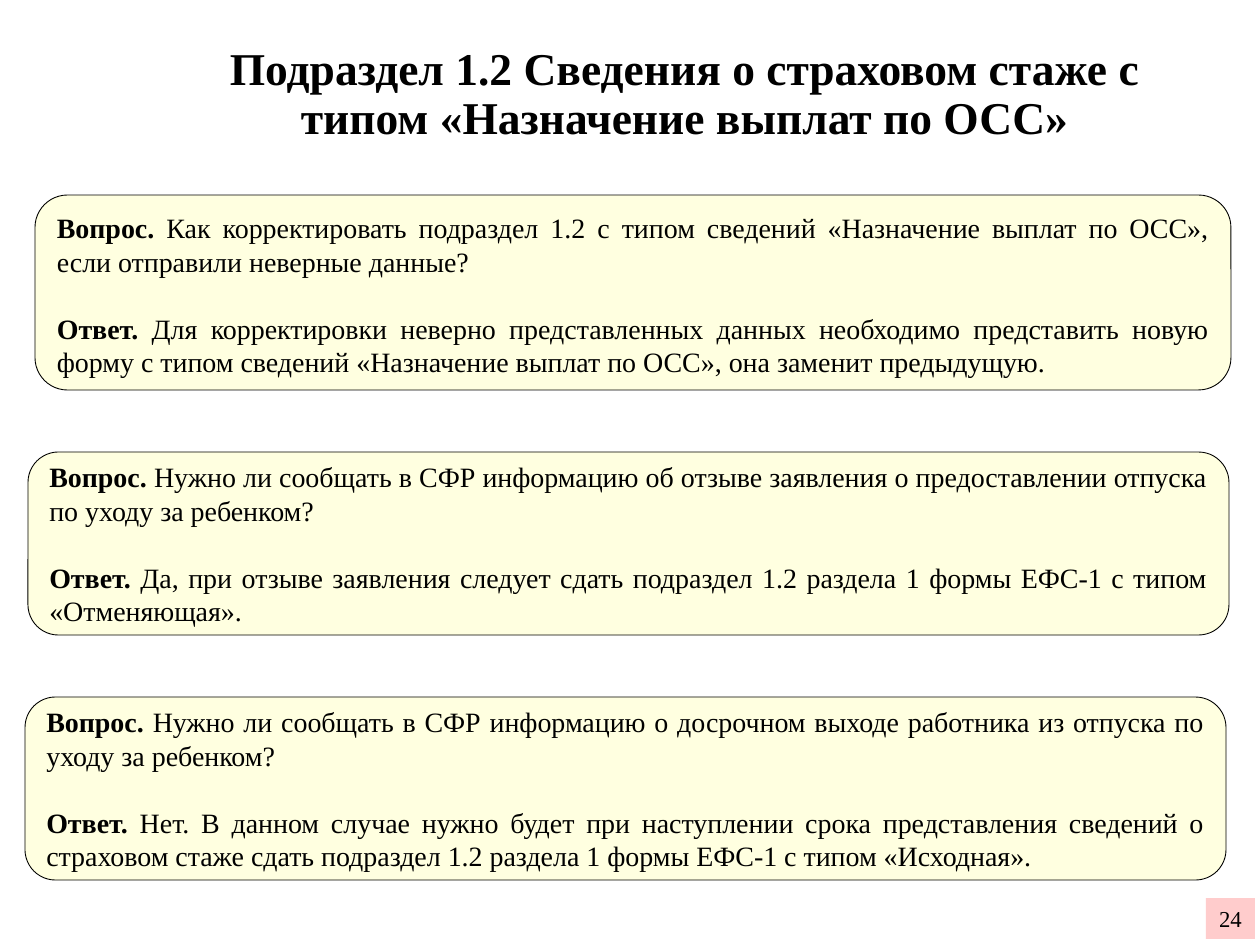
from dataclasses import dataclass

from lxml.etree import SubElement
from pptx import Presentation
from pptx.dml.color import RGBColor
from pptx.enum.shapes import MSO_SHAPE
from pptx.enum.text import MSO_ANCHOR, MSO_AUTO_SIZE, PP_ALIGN
from pptx.oxml.ns import qn
from pptx.util import Emu, Pt

SCALE = 914400 / 126


def px(*nums):
    return [Emu(round(n * SCALE)) for n in nums]


@dataclass(frozen=True)
class Theme:
    face: str = "Times New Roman"
    ink: str = "000000"
    card: str = "FFFFCC"
    badge: str = "FFCCCC"
    alpha: int = 60
    head: int = 26
    body: int = 16
    small: int = 13
    gap: int = 19
    edge: float = 0.5


class Page:
    def __init__(self, deck, theme):
        self.slide = deck.slides.add_slide(deck.slide_layouts[5])
        self.theme = theme

    def style(self, para, size, align, bold=None):
        para.alignment = align
        font = para.font
        font.name, font.size, font.bold = self.theme.face, Pt(size), bold
        font.color.rgb = RGBColor.from_string(self.theme.ink)

    def shape(self, kind, box, fill):
        item = self.slide.shapes.add_shape(kind, *px(*box))
        item.shadow.inherit = False
        item.fill.solid()
        item.fill.fore_color.rgb = RGBColor.from_string(fill)
        return item

    def title(self, box, text):
        item = self.slide.shapes.title
        item.left, item.top, item.width, item.height = px(*box)
        frame = item.text_frame
        frame.text = text
        frame.auto_size = MSO_AUTO_SIZE.NONE
        frame.vertical_anchor = MSO_ANCHOR.MIDDLE
        para = frame.paragraphs[0]
        para.line_spacing = 0.9
        self.style(para, self.theme.head, PP_ALIGN.CENTER, True)

    def card(self, box, anchor, query, reply):
        """Draw a rounded card with a question and its answer."""
        item = self.shape(MSO_SHAPE.ROUNDED_RECTANGLE, box, self.theme.card)
        color = item.fill._xPr.find(".//" + qn("a:srgbClr"))
        SubElement(color, qn("a:alpha"), val=str(self.theme.alpha * 1000))
        item.line.color.rgb = RGBColor.from_string(self.theme.ink)
        item.line.width = Pt(self.theme.edge)
        frame = item.text_frame
        frame.word_wrap = True
        frame.vertical_anchor = anchor
        first, last = frame.paragraphs[0], frame.add_paragraph()
        last.space_before = Pt(self.theme.gap)
        for para, label, text in ((first, "Вопрос. ", query), (last, "Ответ. ", reply)):
            self.style(para, self.theme.body, PP_ALIGN.JUSTIFY)
            lead = para.add_run()
            lead.text, lead.font.bold = label, True
            para.add_run().text = text

    def badge(self, box, text):
        item = self.shape(MSO_SHAPE.RECTANGLE, box, self.theme.badge)
        item.line.fill.background()
        frame = item.text_frame
        frame.text = text
        frame.word_wrap = False
        frame.vertical_anchor = MSO_ANCHOR.MIDDLE
        self.style(frame.paragraphs[0], self.theme.small, PP_ALIGN.CENTER)


CARDS = [
    ((35, 195, 1196, 195), MSO_ANCHOR.TOP,
     "Как корректировать подраздел 1.2 с типом сведений «Назначение выплат по ОСС», "
     "если отправили неверные данные?",
     "Для корректировки неверно представленных данных необходимо представить новую "
     "форму с типом сведений «Назначение выплат по ОСС», она заменит предыдущую."),
    ((28, 452, 1201, 183), MSO_ANCHOR.MIDDLE,
     "Нужно ли сообщать в СФР информацию об отзыве заявления о предоставлении отпуска "
     "по уходу за ребенком?",
     "Да, при отзыве заявления следует сдать подраздел 1.2 раздела 1 формы ЕФС-1 "
     "с типом «Отменяющая»."),
    ((25, 697, 1201, 183), MSO_ANCHOR.MIDDLE,
     "Нужно ли сообщать в СФР информацию о досрочном выходе работника из отпуска "
     "по уходу за ребенком?",
     "Нет. В данном случае нужно будет при наступлении срока представления сведений "
     "о страховом стаже сдать подраздел 1.2 раздела 1 формы ЕФС-1 с типом «Исходная»."),
]


def main():
    deck = Presentation()
    deck.slide_width, deck.slide_height = px(1260, 945)
    page = Page(deck, Theme())
    page.badge((1206, 898, 49, 41), "24")
    page.title((184, 45, 1002, 100),
               "Подраздел 1.2 Сведения о страховом стаже с типом "
               "«Назначение выплат по ОСС»")
    for card in CARDS:
        page.card(*card)
    deck.save("out.pptx")


if __name__ == "__main__":
    main()
